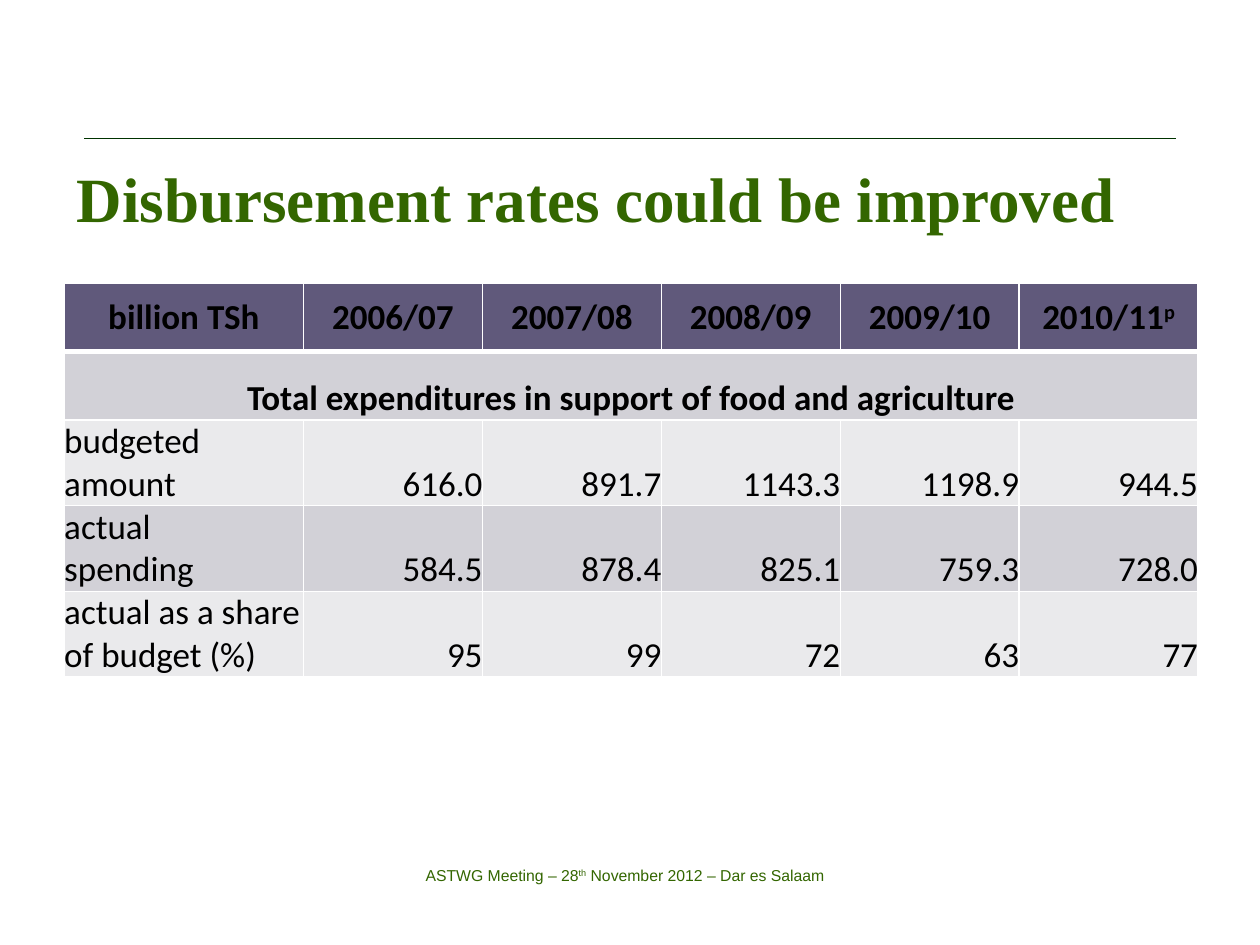
from lxml.etree import SubElement as Sub
from pptx import Presentation
from pptx.dml.color import RGBColor
from pptx.enum.shapes import MSO_CONNECTOR as Link
from pptx.enum.text import MSO_ANCHOR as Anchor, MSO_AUTO_SIZE as Auto, PP_ALIGN as Align
from pptx.oxml.ns import qn
from pptx.util import Pt

GREEN, WHITE = "336600", "FFFFFF"
HEAD, DARK, LIGHT = "60597B", "D2D1D7", "EAEAEC"
TITLE = dict(name="Times New Roman", size=Pt(36), bold=True)
FOOT = dict(name="Arial", size=Pt(9))
CELL = dict(name="Calibri", size=Pt(20))
ROWS = [
    ["billion TSh", "2006/07", "2007/08", "2008/09", "2009/10", "2010/11^p"],
    ["Total expenditures in support of food and agriculture"] + [""] * 5,
    ["budgeted amount", "616.0", "891.7", "1143.3", "1198.9", "944.5"],
    ["actual\nspending", "584.5", "878.4", "825.1", "759.3", "728.0"],
    ["actual as a share of budget (%)", "95", "99", "72", "63", "77"],
]
FILLS = [HEAD, DARK, LIGHT, DARK, LIGHT]


def paint(hue):
    """Turn a hex string into a colour."""
    return RGBColor.from_string(hue)


def apply(item, form):
    """Set every attribute named in a dict of format values."""
    for key, value in form.items():
        setattr(item, key, value)


def write(frame, text, form, hue, align):
    """Fill a frame with lines; parts between carets alternate with superscript."""
    for row, line in enumerate(text.split("\n")):
        para = frame.add_paragraph() if row else frame.paragraphs[0]
        para.alignment = align
        for turn, part in enumerate(line.split("^")):
            run = para.add_run()
            run.text = part
            apply(run.font, form)
            run.font.color.rgb = paint(hue)
            if turn % 2:
                run.font._element.set("baseline", "30000")


def edge(cell, low):
    """Draw white borders round a cell, with the given bottom width."""
    props = cell._tc.get_or_add_tcPr()
    widths = dict(lnL=1, lnR=1, lnT=1, lnB=low)
    for spot, (tag, width) in enumerate(widths.items()):
        line = Sub(props, qn(f"a:{tag}"), w=str(Pt(width)))
        Sub(Sub(line, qn("a:solidFill")), qn("a:srgbClr"), val=WHITE)
        props.insert(spot, line)


def add_head(slide, left, top, width, height):
    """Place the rule and, below it, the title."""
    rule = slide.shapes.add_connector(
        Link.STRAIGHT, Pt(left + 11.5), Pt(top), Pt(left + width - 12.5), Pt(top))
    rule.line.width = Pt(0.75)
    rule.line.color.rgb = paint("003300")
    Sub(rule._element.spPr, qn("a:effectLst"))
    title = slide.shapes.title
    apply(title, dict(left=Pt(left), top=Pt(top + 6.5),
                      width=Pt(width), height=Pt(height - 6.5)))
    apply(title.text_frame, dict(word_wrap=True, auto_size=Auto.NONE,
                                 vertical_anchor=Anchor.MIDDLE))
    write(title.text_frame, "Disbursement rates could be improved", TITLE, GREEN, Align.LEFT)


def add_grid(slide, left, top, width, height):
    """Place the spending table."""
    count = len(ROWS[0])
    grid = slide.shapes.add_table(
        len(ROWS), count, Pt(left), Pt(top), Pt(width), Pt(height)).table
    first, upper = 136.8, 39
    for col, part in enumerate(grid.columns):
        part.width = Pt((width - first) / (count - 1) if col else first)
    for row, part in enumerate(grid.rows):
        part.height = Pt(upper if row < 2 else (height - 2 * upper) / 3)
    grid.cell(1, 0).merge(grid.cell(1, count - 1))
    sides = dict.fromkeys(["margin_left", "margin_right", "margin_top", "margin_bottom"], 0)
    for row, texts in enumerate(ROWS):
        for col, text in enumerate(texts):
            cell = grid.cell(row, col)
            apply(cell, sides)
            cell.vertical_anchor = Anchor.BOTTOM if row else Anchor.MIDDLE
            cell.fill.solid()
            cell.fill.fore_color.rgb = paint(FILLS[row])
            edge(cell, 1 if row else 3)
            if text:
                align = Align.CENTER if row < 2 else Align.RIGHT if col else Align.LEFT
                write(cell.text_frame, text, CELL | dict(bold=row < 2), "000000", align)


def add_foot(slide, left, top, width, height):
    """Place the meeting line at the foot."""
    box = slide.shapes.add_textbox(Pt(left), Pt(top), Pt(width), Pt(height))
    apply(box.text_frame, dict(word_wrap=True, auto_size=Auto.SHAPE_TO_FIT_TEXT))
    write(box.text_frame, "ASTWG Meeting – 28^th^ November 2012 – Dar es Salaam",
          FOOT, GREEN, Align.CENTER)


def main():
    """Build and save the slide."""
    deck = Presentation()
    apply(deck, dict(slide_width=Pt(720), slide_height=Pt(540)))
    slide = deck.slides.add_slide(deck.slide_layouts[5])
    add_head(slide, 36.7, 79.2, 648, 60.5)
    add_grid(slide, 36.7, 162, 648, 225)
    add_foot(slide, 121.7, 491, 470.9, 18)
    deck.save("out.pptx")


if __name__ == "__main__":
    main()
